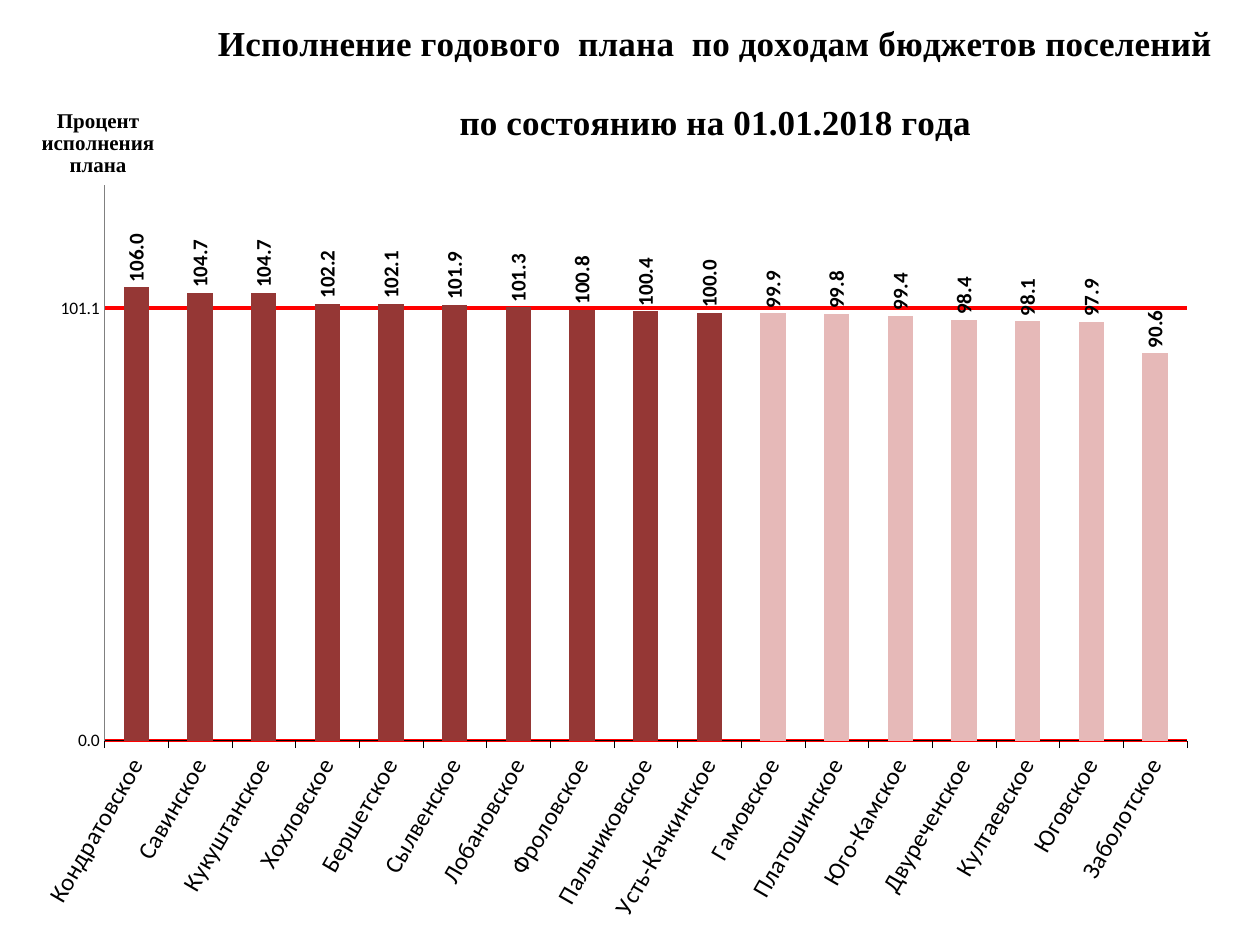
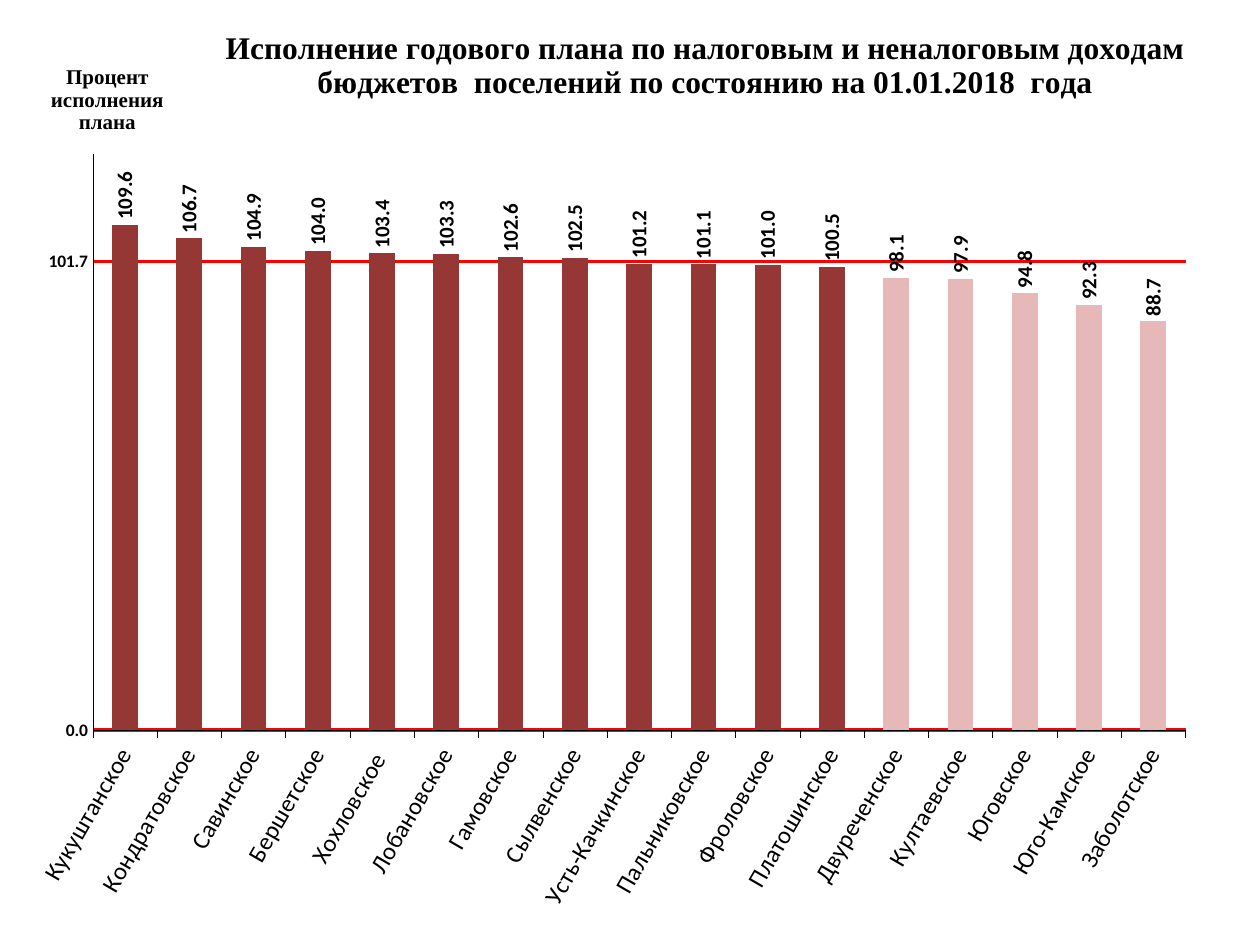
from lxml import etree
from pptx import Presentation
from pptx.chart.data import CategoryChartData
from pptx.dml.color import RGBColor
from pptx.enum import chart as ch
from pptx.oxml import ns
from pptx.util import Pt

COLORS = {
    "text": "000000",
    "met": "953735",
    "missed": "E6B9B8",
    "series": "376092",
    "average": "FF0000",
    "pale_axis": "808080",
}
SERIF, SANS = "Times New Roman", "Calibri"
PLAN_MET = 100

ALL_INCOME = {
    "frame": (0, 0, 720, 538.56),
    "title": "Исполнение годового  плана  по доходам бюджетов поселений  \n"
             "по состоянию на 01.01.2018 года",
    "title_size": 20,
    "title_at": (0.17, 0.02),
    "axis_title": "Процент\nисполнения\nплана",
    "axis_title_at": (0.03, 0.11),
    "plot": (0.083, 0.196, 0.859, 0.59),
    "average": 101.1,
    "top": 130,
    "bold_scale": False,
    "scale_line": "pale_axis",
    "percents": {
        "Кондратовское": 106.0, "Савинское": 104.7, "Кукуштанское": 104.7,
        "Хохловское": 102.2, "Бершетское": 102.1, "Сылвенское": 101.9,
        "Лобановское": 101.3, "Фроловское": 100.8, "Пальниковское": 100.4,
        "Усть-Качкинское": 100.0, "Гамовское": 99.9, "Платошинское": 99.8,
        "Юго-Камское": 99.4, "Двуреченское": 98.4, "Култаевское": 98.1,
        "Юговское": 97.9, "Заболотское": 90.6,
    },
}
OWN_INCOME = {
    "frame": (5.76, 2.16, 705.6, 536.4),
    "title": "Исполнение годового плана по налоговым и неналоговым доходам "
             "бюджетов  поселений по состоянию на 01.01.2018  года",
    "title_size": 18,
    "title_at": (0.17, 0.02),
    "axis_title": "Процент\nисполнения\nплана",
    "axis_title_at": (0.03, 0.06),
    "plot": (0.067, 0.16, 0.885, 0.614),
    "average": 101.7,
    "top": 125,
    "bold_scale": True,
    "scale_line": "text",
    "percents": {
        "Кукуштанское": 109.6, "Кондратовское": 106.7, "Савинское": 104.9,
        "Бершетское": 104.0, "Хохловское ": 103.4, "Лобановское": 103.3,
        "Гамовское": 102.6, "Сылвенское": 102.5, "Усть-Качкинское": 101.2,
        "Пальниковское": 101.1, "Фроловское": 101.0, "Платошинское": 100.5,
        "Двуреченское": 98.1, "Култаевское": 97.9, "Юговское": 94.8,
        "Юго-Камское": 92.3, "Заболотское": 88.7,
    },
}


def rgb(name):
    return RGBColor.from_string(COLORS[name])


def set_all(target, values):
    for name, value in values.items():
        setattr(target, name, value)


def set_font(font, size, bold=False, name=SANS):
    set_all(font, {"size": Pt(size), "bold": bold, "name": name})
    font.color.rgb = rgb("text")


def set_line(line, color, width):
    line.color.rgb = rgb(color)
    line.width = Pt(width)


def set_layout(parent, index, box, inner=False):
    """Fix a chart part at (x, y[, w, h]), given as fractions of the chart."""
    for old in parent.findall(ns.qn("c:layout")):
        parent.remove(old)
    layout = etree.Element(ns.qn("c:layout"))
    manual = etree.SubElement(layout, ns.qn("c:manualLayout"))
    settings = [("layoutTarget", "inner")] if inner else []
    settings += [("xMode", "edge"), ("yMode", "edge")]
    settings += zip("xywh", box)
    for tag, value in settings:
        etree.SubElement(manual, ns.qn(f"c:{tag}")).set("val", str(value))
    parent.insert(index, layout)


def rotate_text(element, degrees):
    body = next(element.iter(ns.qn("a:bodyPr")))
    body.set("rot", str(degrees * 60000))
    body.set("vert", "horz")


def write_title(title, wording, size, position):
    title.text_frame.text = wording
    for paragraph in title.text_frame.paragraphs:
        set_font(paragraph.font, size, True, SERIF)
        for run in paragraph.runs:
            set_font(run.font, size, True, SERIF)
    rotate_text(title._element, 0)
    set_layout(title._element, 1, position)


def format_settlement_axis(axis):
    set_all(axis, {
        "tick_label_position": ch.XL_TICK_LABEL_POSITION.LOW,
        "major_tick_mark": ch.XL_TICK_MARK.OUTSIDE,
        "has_major_gridlines": False,
    })
    set_line(axis.format.line, "text", 0.25)
    set_font(axis.tick_labels.font, 14)
    rotate_text(axis._element.find(ns.qn("c:txPr")), -60)


def format_percent_axis(axis, report):
    """Step by the average, so that the one inner gridline marks it."""
    set_all(axis, {
        "minimum_scale": 0,
        "maximum_scale": report["top"],
        "major_unit": report["average"],
        "major_tick_mark": ch.XL_TICK_MARK.NONE,
        "has_major_gridlines": True,
    })
    set_line(axis.major_gridlines.format.line, "average", 2)
    set_line(axis.format.line, report["scale_line"], 0.25)
    set_all(axis.tick_labels, {"number_format": "0.0", "number_format_is_linked": False})
    set_font(axis.tick_labels.font, 10, report["bold_scale"])
    write_title(axis.axis_title, report["axis_title"], 12, report["axis_title_at"])


def format_columns(plot):
    set_all(plot, {"gap_width": 150, "vary_by_categories": False})
    series = plot.series[0]
    series.format.fill.solid()
    series.format.fill.fore_color.rgb = rgb("series")
    for index, percent in enumerate(series.values):
        fill = series.points[index].format.fill
        fill.solid()
        fill.fore_color.rgb = rgb("met" if percent >= PLAN_MET else "missed")
    labels = series.data_labels
    set_all(labels, {
        "show_value": True,
        "position": ch.XL_LABEL_POSITION.OUTSIDE_END,
        "number_format": "#,##0.0",
        "number_format_is_linked": False,
    })
    set_font(labels.font, 12, True)
    rotate_text(labels._element.find(ns.qn("c:txPr")), -90)


def add_report(prs, report):
    slide = prs.slides.add_slide(prs.slide_layouts[6])
    data = CategoryChartData(number_format="0.0")
    data.categories = report["percents"].keys()
    data.add_series("Series 1", report["percents"].values())
    frame = map(Pt, report["frame"])
    chart = slide.shapes.add_chart(ch.XL_CHART_TYPE.COLUMN_CLUSTERED, *frame, data).chart
    chart.has_legend = False
    set_font(chart.font, 10)
    write_title(chart.chart_title, report["title"], report["title_size"], report["title_at"])
    format_settlement_axis(chart.category_axis)
    format_percent_axis(chart.value_axis, report)
    format_columns(chart.plots[0])
    plot_area = next(chart._chartSpace.iter(ns.qn("c:plotArea")))
    set_layout(plot_area, 0, report["plot"], inner=True)


def main():
    prs = Presentation()
    set_all(prs, {"slide_width": Pt(720), "slide_height": Pt(540)})
    for report in (ALL_INCOME, OWN_INCOME):
        add_report(prs, report)
    prs.save("out.pptx")


if __name__ == "__main__":
    main()
